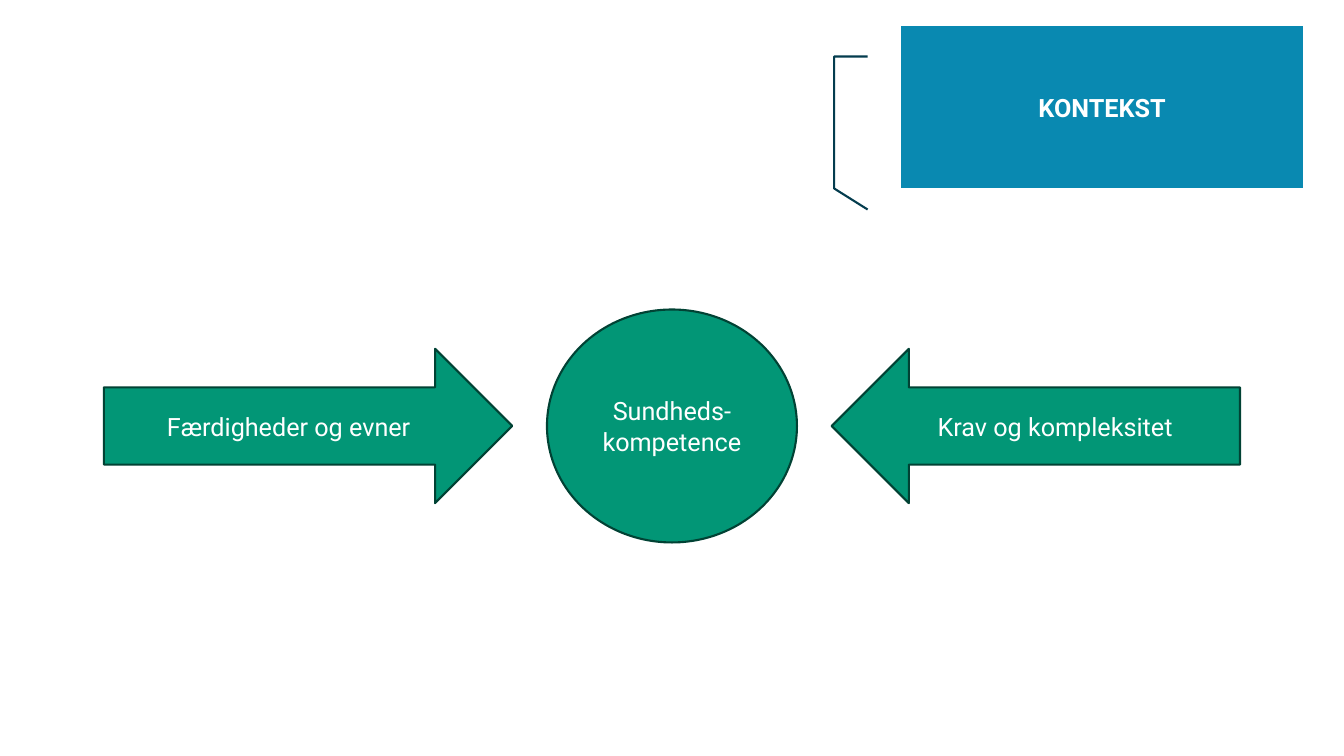
"""Build a slide on health competence: two arrows meeting at a circle, and a context callout."""
import dataclasses

import pptx
import pptx.dml.color
import pptx.enum.shapes
import pptx.enum.text
import pptx.slide
import pptx.text.text
import pptx.util

Cm = pptx.util.Cm
Pt = pptx.util.Pt
ShapeKind = pptx.enum.shapes.MSO_SHAPE

SLIDE_WIDTH, SLIDE_HEIGHT = 33.87, 19.05
ARROW_LEFT, ARROW_TOP, ARROW_WIDTH, ARROW_HEIGHT = 2.62, 8.79, 10.29, 3.89
CIRCLE_WIDTH, CIRCLE_HEIGHT = 6.3, 5.87
GREEN, DARK_GREEN = "029676", "014234"
BLUE, DARK_BLUE = "0989B1", "043C4E"
WHITE = "FFFFFF"


@dataclasses.dataclass(frozen=True)
class Figure:
    """A labelled shape with its place in centimetres."""

    kind: ShapeKind
    text: str
    left: float
    top: float
    width: float
    height: float
    fill: str = GREEN
    line: str = DARK_GREEN
    bold: bool = False


FIGURES = [
    Figure(ShapeKind.RIGHT_ARROW, "Færdigheder og evner",
           ARROW_LEFT, ARROW_TOP, ARROW_WIDTH, ARROW_HEIGHT),
    Figure(ShapeKind.LEFT_ARROW, "Krav og kompleksitet",
           SLIDE_WIDTH - ARROW_LEFT - ARROW_WIDTH, ARROW_TOP, ARROW_WIDTH, ARROW_HEIGHT),
    Figure(ShapeKind.OVAL, "Sundheds-kompetence",
           (SLIDE_WIDTH - CIRCLE_WIDTH) / 2, ARROW_TOP + (ARROW_HEIGHT - CIRCLE_HEIGHT) / 2,
           CIRCLE_WIDTH, CIRCLE_HEIGHT),
    Figure(ShapeKind.LINE_CALLOUT_3_NO_BORDER, "KONTEKST",
           22.71, 0.66, 10.13, 4.09, BLUE, DARK_BLUE, bold=True),
]


def color(value: str) -> pptx.dml.color.RGBColor:
    """Turn a hex string into a colour."""
    return pptx.dml.color.RGBColor.from_string(value)


def write_text(frame: pptx.text.text.TextFrame, text: str, *, size: float = 18,
               font: str = "Roboto", fill: str = WHITE, bold: bool = False) -> None:
    """Write one centred paragraph in the given format."""
    frame.word_wrap = True
    frame.vertical_anchor = pptx.enum.text.MSO_ANCHOR.MIDDLE
    paragraph = frame.paragraphs[0]
    paragraph.alignment = pptx.enum.text.PP_ALIGN.CENTER
    run = paragraph.add_run()
    run.text = text
    run.font.name = font
    run.font.size = Pt(size)
    run.font.bold = bold
    run.font.color.rgb = color(fill)


def draw_figure(slide: pptx.slide.Slide, figure: Figure) -> None:
    """Draw a figure with its label."""
    shape = slide.shapes.add_shape(figure.kind, Cm(figure.left), Cm(figure.top),
                                   Cm(figure.width), Cm(figure.height))
    shape.shadow.inherit = False
    shape.fill.solid()
    shape.fill.fore_color.rgb = color(figure.fill)
    shape.line.color.rgb = color(figure.line)
    shape.line.width = Pt(1.5)
    write_text(shape.text_frame, figure.text, bold=figure.bold)


def main() -> None:
    """Create and save the presentation."""
    presentation = pptx.Presentation()
    presentation.slide_width = Cm(SLIDE_WIDTH)
    presentation.slide_height = Cm(SLIDE_HEIGHT)
    slide = presentation.slides.add_slide(presentation.slide_layouts[6])
    for figure in FIGURES:
        draw_figure(slide, figure)
    presentation.save("out.pptx")


if __name__ == "__main__":
    main()
